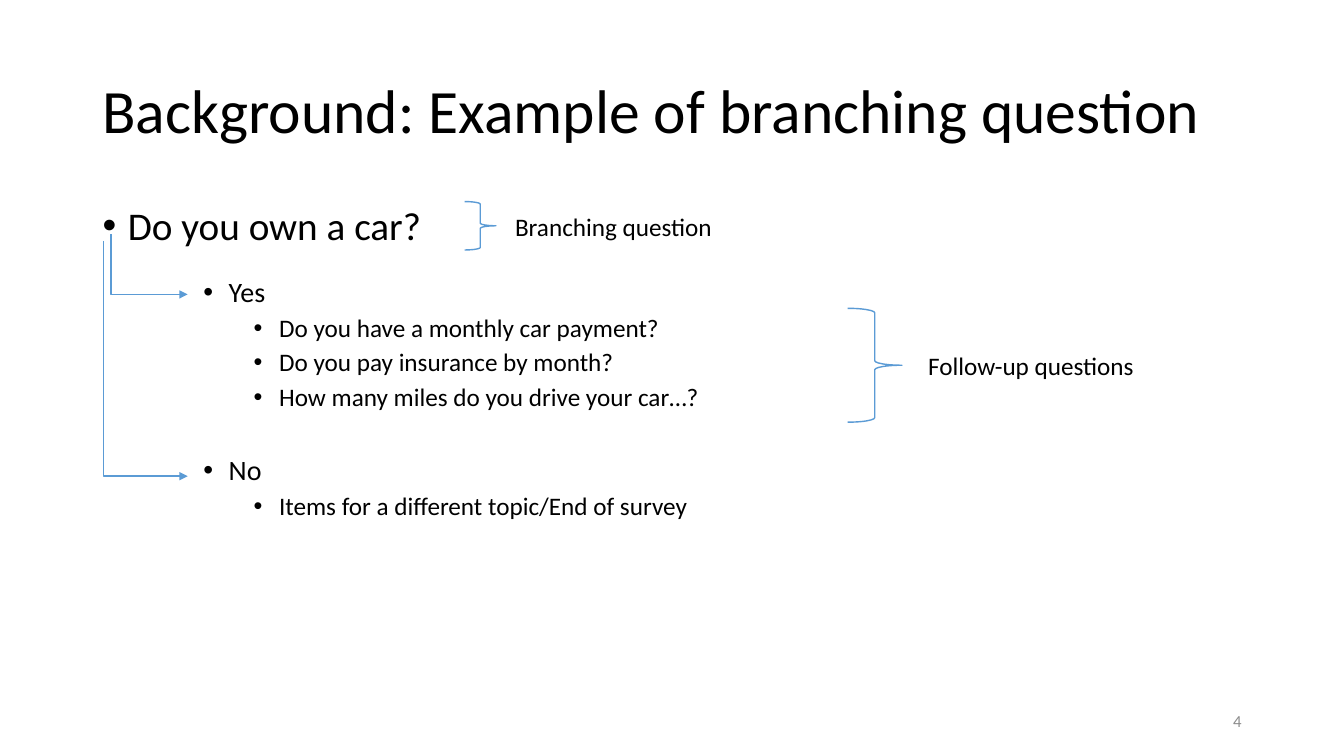
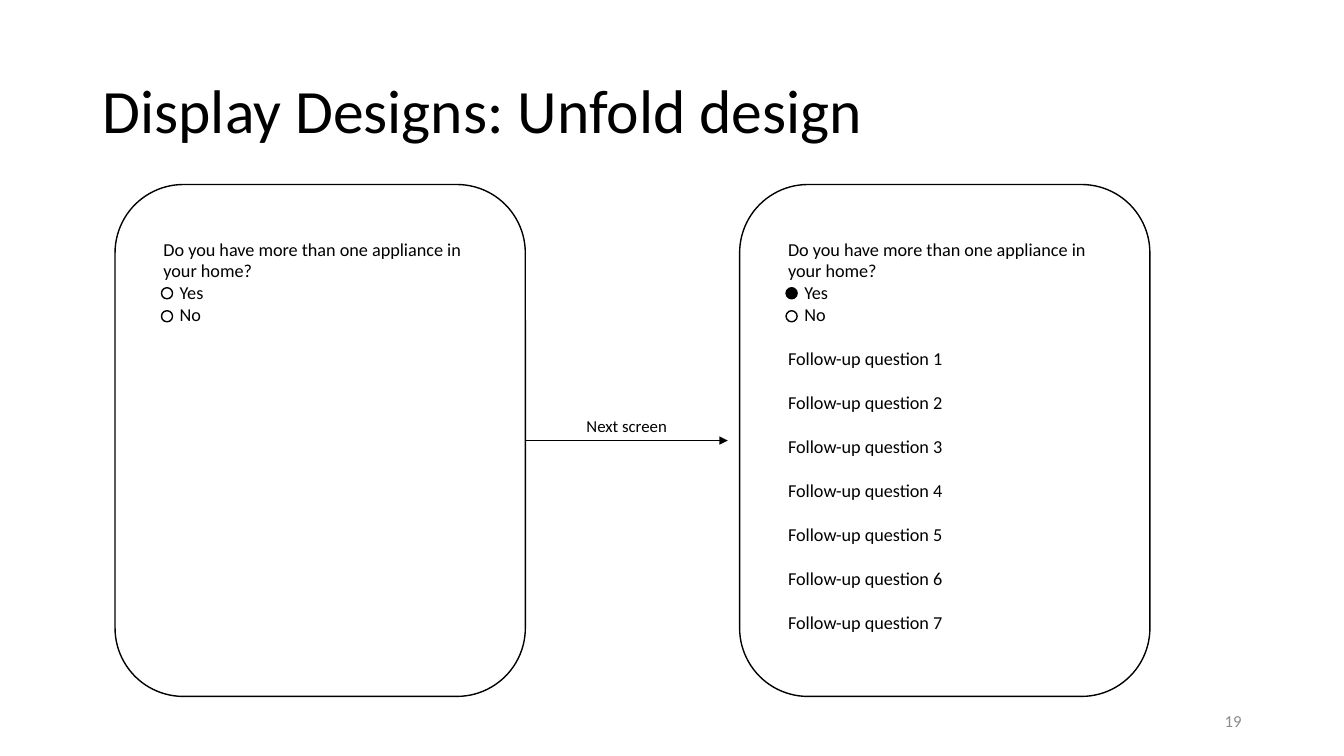
from lxml import etree
from pptx import Presentation
from pptx.dml.color import RGBColor
from pptx.enum.shapes import MSO_CONNECTOR, MSO_SHAPE
from pptx.enum.text import MSO_ANCHOR, MSO_AUTO_SIZE, PP_ALIGN
from pptx.oxml.ns import qn
from pptx.util import Cm, Pt

BLACK = RGBColor(0x00, 0x00, 0x00)
BLUE = RGBColor(0x5B, 0x9B, 0xD5)
GREY = RGBColor(0x8C, 0x8C, 0x8C)
FONT = "Calibri"
ELBOW, STRAIGHT = MSO_CONNECTOR.ELBOW, MSO_CONNECTOR.STRAIGHT
BRACE, FRAME, RADIO = MSO_SHAPE.RIGHT_BRACE, MSO_SHAPE.ROUNDED_RECTANGLE, MSO_SHAPE.OVAL
MIDDLE, NO_FIT = MSO_ANCHOR.MIDDLE, MSO_AUTO_SIZE.NONE
LEFT, RIGHT = PP_ALIGN.LEFT, PP_ALIGN.RIGHT

TITLE_AND_BODY, TITLE_ONLY = 1, 5
MARGIN, CONTENT_WIDTH = 2.33, 29.21
LEVELS = [(28, 0.64), (24, 1.91), (20, 3.18), (18, 4.45)]
BULLET_HANG = 0.64

SURVEY_OUTLINE = [
    ("Do you own a car?", 0, 0),
    ("Yes", 2, 21.5),
    ("Do you have a monthly car payment?", 3, 5),
    ("Do you pay insurance by month?", 3, 5),
    ("How many miles do you drive your car…?", 3, 5),
    ("No", 2, 32),
    ("Items for a different topic/End of survey", 3, 5),
]
SCREEN_QUESTION = "Do you have more than one appliance in your home?"
ANSWERS = ["Yes", "No"]
FOLLOW_UPS = [f"Follow-up question {number}" for number in range(1, 8)]


def place(shape, left, top, width, height):
    """Move a shape to a box given in centimetres."""
    shape.left, shape.top = Cm(left), Cm(top)
    shape.width, shape.height = Cm(width), Cm(height)


def write(paragraph, text, size, color=BLACK):
    """Add one formatted run to a paragraph."""
    run = paragraph.add_run()
    run.text = text
    run.font.name, run.font.size, run.font.color.rgb = FONT, Pt(size), color


def next_paragraph(frame, index):
    """Return the first paragraph of a frame, or a new one after it."""
    return frame.add_paragraph() if index else frame.paragraphs[0]


def add_label(slide, text, left, top, width, size, color=BLACK, align=LEFT):
    """Add a one-line text box."""
    label = slide.shapes.add_textbox(Cm(left), Cm(top), Cm(width), Cm(1.02))
    label.text_frame.word_wrap = True
    paragraph = label.text_frame.paragraphs[0]
    paragraph.alignment = align
    write(paragraph, text, size, color)
    return label


def add_outline(slide, kind, box, color, fill=None):
    """Add a preset shape with a thin line and an optional fill."""
    shape = slide.shapes.add_shape(kind, *map(Cm, box))
    shape.shadow.inherit = False
    shape.line.color.rgb, shape.line.width = color, Pt(1)
    if fill is None:
        shape.fill.background()
    else:
        shape.fill.solid()
        shape.fill.fore_color.rgb = fill


def add_arrow(slide, kind, start, end, color):
    """Add an arrow; an elbow runs down first and then across."""
    arrow = slide.shapes.add_connector(kind, *map(Cm, start + end))
    arrow.line.color.rgb, arrow.line.width = color, Pt(1)
    properties = arrow._element.spPr
    etree.SubElement(properties.find(qn("a:ln")), qn("a:tailEnd"), type="triangle")
    etree.SubElement(properties, qn("a:effectLst"))
    if kind == ELBOW:
        guides = properties.find(qn("a:prstGeom")).get_or_add_avLst()
        etree.SubElement(guides, qn("a:gd"), name="adj1", fmla="val 0")


def start_slide(deck, layout, title, number):
    """Add a slide with its title and page number."""
    slide = deck.slides.add_slide(deck.slide_layouts[layout])
    heading = slide.shapes.title
    place(heading, MARGIN, 1.01, CONTENT_WIDTH, 3.68)
    heading.text_frame.vertical_anchor = MIDDLE
    heading.text_frame.auto_size = NO_FIT
    paragraph = heading.text_frame.paragraphs[0]
    paragraph.alignment, paragraph.line_spacing = LEFT, 0.9
    write(paragraph, title, 44)
    page = add_label(slide, number, 23.92, 17.66, 7.62, 12, GREY, RIGHT)
    page.text_frame.vertical_anchor = MIDDLE
    return slide


def fill_outline(body, entries):
    """Write a bulleted outline into the body placeholder."""
    body.text_frame.auto_size = NO_FIT
    for index, (text, level, gap) in enumerate(entries):
        size, indent = LEVELS[level]
        paragraph = next_paragraph(body.text_frame, index)
        paragraph.level = level
        paragraph.line_spacing, paragraph.space_before = 0.9, Pt(gap)
        properties = paragraph._p.get_or_add_pPr()
        properties.set("marL", str(Cm(indent)))
        properties.set("indent", str(-Cm(BULLET_HANG)))
        etree.SubElement(properties, qn("a:buFont"), typeface="Arial")
        etree.SubElement(properties, qn("a:buChar"), char="•")
        write(paragraph, text, size)


def add_braced_label(slide, text, box, gap):
    """Add a right brace with a label centred beside its point."""
    left, top, width, height = box
    add_outline(slide, BRACE, box, BLUE)
    add_label(slide, text, left + width + gap, top + height / 2 - 0.5, 6.5, 18)


def add_screen(slide, left, top, chosen=None, follow_ups=()):
    """Add a survey screen with a question, answers and follow-ups."""
    add_outline(slide, FRAME, (left, top, 10.34, 12.9), BLACK)
    content = slide.shapes.add_textbox(Cm(left + 0.97), Cm(top + 1.22), Cm(8.6), Cm(10.26))
    frame = content.text_frame
    frame.word_wrap = True
    for index, text in enumerate([SCREEN_QUESTION, *ANSWERS, *follow_ups]):
        paragraph = next_paragraph(frame, index)
        if text in ANSWERS:
            paragraph._p.get_or_add_pPr().set("marL", str(Cm(0.41)))
        elif index:
            paragraph.space_before = Pt(15.8)
        write(paragraph, text, 13)
    for row, answer in enumerate(ANSWERS):
        dot = BLACK if answer == chosen else None
        add_outline(slide, RADIO, (left + 1.17, top + 2.6 + row * 0.58, 0.28, 0.28), BLACK, dot)


def build_branching_slide(deck):
    """Build the slide with the branching question outline."""
    slide = start_slide(deck, TITLE_AND_BODY, "Background: Example of branching question", "4")
    body = slide.placeholders[1]
    place(body, MARGIN, 5.07, CONTENT_WIDTH, 12.09)
    fill_outline(body, SURVEY_OUTLINE)
    for start, end in [((2.8, 5.9), (4.73, 7.42)), ((2.61, 6.07), (4.73, 12))]:
        add_arrow(slide, ELBOW, start, end, BLUE)
    add_braced_label(slide, "Branching question", (11.71, 5.08, 0.79, 1.22), 0.23)
    add_braced_label(slide, "Follow-up questions", (21.36, 7.77, 1.37, 2.87), 0.41)


def build_unfold_slide(deck):
    """Build the slide with two consecutive survey screens."""
    slide = start_slide(deck, TITLE_ONLY, "Display Designs: Unfold design", "19")
    add_screen(slide, 2.9, 4.65)
    add_screen(slide, 18.64, 4.65, "Yes", FOLLOW_UPS)
    add_arrow(slide, STRAIGHT, (13.24, 11.1), (18.34, 11.1), BLACK)
    add_label(slide, "Next screen", 14.53, 10.34, 2.82, 12)


def main():
    """Build and save the deck."""
    deck = Presentation()
    deck.slide_width, deck.slide_height = Cm(33.87), Cm(19.05)
    build_branching_slide(deck)
    build_unfold_slide(deck)
    deck.save("out.pptx")


if __name__ == "__main__":
    main()
